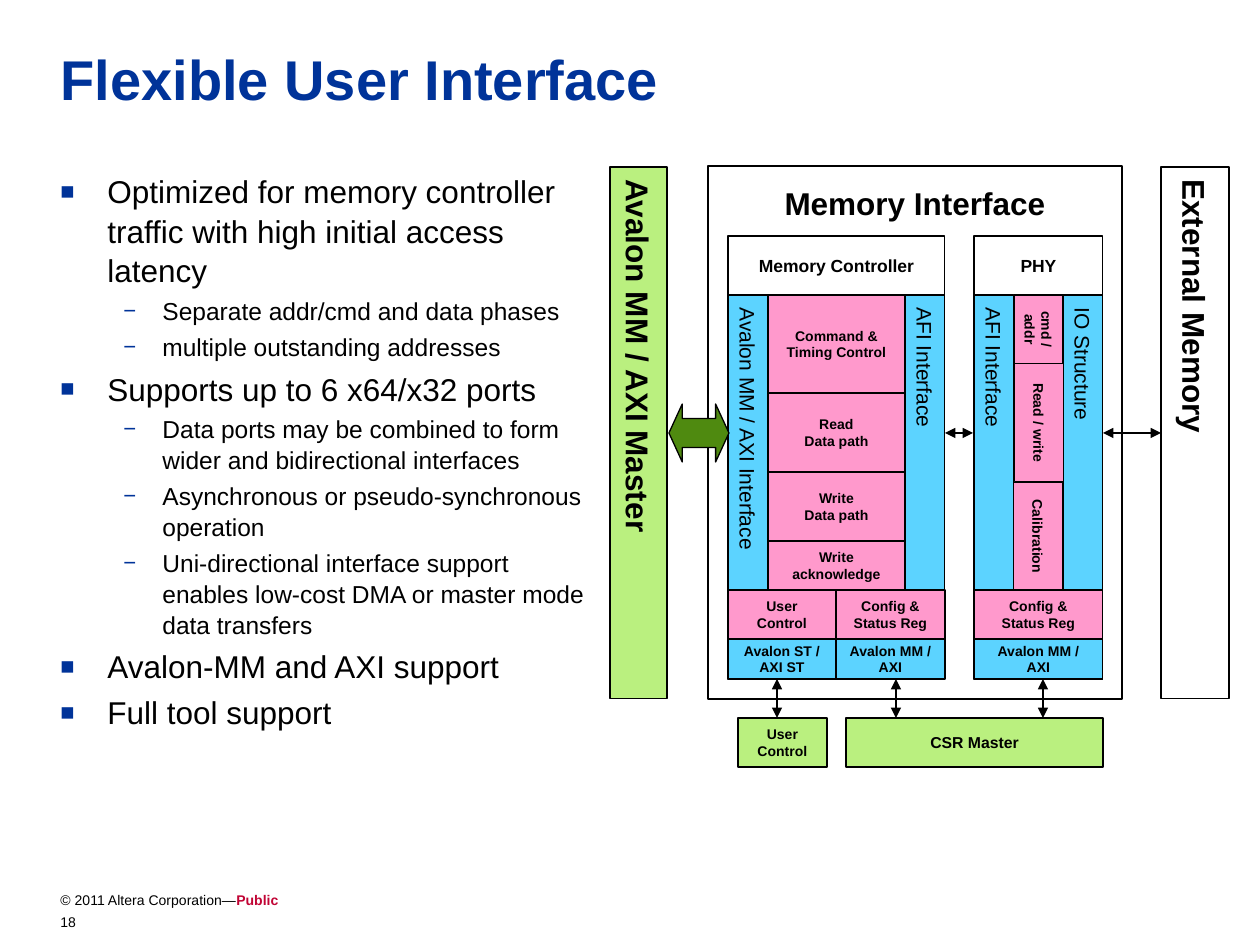
from lxml import etree
from pptx import Presentation, util as u
from pptx.dml.color import RGBColor
from pptx.enum import shapes, text
from pptx.oxml.ns import qn

PX = 914400 // 126
FONT = "Arial"
BLACK, WHITE, NAVY, RED = "000000", "FFFFFF", "003399", "C10435"
PINK, SKY, LIME, GREEN = "FF99CC", "5CD3FF", "BAF07F", "4F8A10"

TITLE = "Flexible User Interface"
BULLETS = [
    (0, "Optimized for memory controller traffic with high initial access latency"),
    (1, "Separate addr/cmd and data phases"),
    (1, "multiple outstanding addresses"),
    (0, "Supports up to 6 x64/x32 ports"),
    (1, "Data ports may be combined to form wider and bidirectional interfaces"),
    (1, "Asynchronous or pseudo-synchronous operation"),
    (1, "Uni-directional interface support enables low-cost DMA or master mode data transfers"),
    (0, "Avalon-MM and AXI support"),
    (0, "Full tool support"),
]
# per level: size pt, space before pt, margin px, hanging px, bullet, bullet size %
LEVELS = [(18, 3.6, 47, 47, "■", 75), (14, 3, 102, 39, "−", 90)]

# Shared edges of the block diagram
TOP, CORE, CONFIG, BUS, BOTTOM = 236, 295, 590, 639, 679
CONTROLLER = (728, 768, 905, 945)
CONTROLLER_MID = 836
PHY = (974, 1014, 1063, 1103)
FRAME = (708, 166, 414, 533)
EXTERNAL = (1161, 167, 68, 532)

PANELS = [("Memory Controller", CONTROLLER), ("PHY", PHY)]
SIDE_BARS = [  # left, right, text
    (*CONTROLLER[:2], "Avalon MM / AXI Interface"),
    (*CONTROLLER[2:], "AFI Interface"),
    (*PHY[:2], "AFI Interface"),
    (*PHY[2:], "IO Structure"),
]
STACKS = [  # columns, rotation, (bottom edge, text) from CORE down
    (CONTROLLER, 0, [(393, "Command &\nTiming Control"), (472, "Read\nData path"),
                     (541, "Write\nData path"), (CONFIG, "Write\nacknowledge")]),
    (PHY, 90, [(364, "cmd / addr"), (482, "Read / write"), (CONFIG, "Calibration")]),
]
PORTS = [  # left, right, register block, bus
    (CONTROLLER[0], CONTROLLER_MID, "User Control", "Avalon ST /\nAXI ST"),
    (CONTROLLER_MID, CONTROLLER[3], "Config & Status Reg", "Avalon MM /\nAXI"),
    (PHY[0], PHY[3], "Config & Status Reg", "Avalon MM /\nAXI"),
]
MASTERS = [(738, 827, "User Control", 8), (846, 1103, "CSR Master", 9)]
PORT_ARROWS_X = [777, 896, 1043]
LINK_Y = 433

prs = Presentation()
prs.slide_width, prs.slide_height = u.Inches(10), u.Inches(7.5)
slide = prs.slides.add_slide(prs.slide_layouts[5])


def rgb(color):
    return RGBColor.from_string(color)


def place(*lengths):
    return [u.Emu(n * PX) for n in lengths]


def style(font, size, color=BLACK, bold=False):
    font.name, font.size, font.bold = FONT, u.Pt(size), bold
    font.color.rgb = rgb(color)


def write(shape, words, size, bold=True, align=text.PP_ALIGN.CENTER,
          anchor=text.MSO_ANCHOR.MIDDLE, color=BLACK):
    frame = shape.text_frame
    frame.word_wrap, frame.vertical_anchor = True, anchor
    frame.text = words
    for paragraph in frame.paragraphs:
        paragraph.alignment = align
        for run in paragraph.runs:
            style(run.font, size, color, bold)


def label(box, words, size, **options):
    shape = slide.shapes.add_textbox(*place(*box))
    write(shape, words, size, **options)
    return shape


def block(box, fill, words="", size=8, bold=True, vertical=False, rotation=0,
          line=0.75, kind=shapes.MSO_SHAPE.RECTANGLE):
    x, y, w, h = box
    if rotation:  # the box is given as it appears after a quarter turn
        x, y, w, h = x + (w - h) / 2, y + (h - w) / 2, h, w
    shape = slide.shapes.add_shape(kind, *place(*map(round, (x, y, w, h))))
    shape.shadow.inherit = False
    shape.rotation = rotation
    if fill:
        shape.fill.solid()
        shape.fill.fore_color.rgb = rgb(fill)
    else:
        shape.fill.background()
    shape.line.color.rgb, shape.line.width = rgb(BLACK), u.Pt(line)
    if words:
        write(shape, words, size, bold)
    if vertical:
        shape.text_frame._txBody.bodyPr.set("vert", "eaVert")
    return shape


def double_arrow(x1, y1, x2, y2):
    arrow = slide.shapes.add_connector(shapes.MSO_CONNECTOR.STRAIGHT, *place(x1, y1, x2, y2))
    arrow.line.color.rgb, arrow.line.width = rgb(BLACK), u.Pt(1.5)
    line = arrow.line._get_or_add_ln()
    for end in ("a:headEnd", "a:tailEnd"):
        etree.SubElement(line, qn(end), type="triangle")
    etree.SubElement(arrow._element.spPr, qn("a:effectLst"))
    return arrow


def add_bullet(paragraph, margin, hanging, mark, percent):
    props = paragraph._p.get_or_add_pPr()
    props.set("marL", str(margin * PX))
    props.set("indent", str(-hanging * PX))
    color = etree.SubElement(props, qn("a:buClr"))
    etree.SubElement(color, qn("a:srgbClr"), val=NAVY)
    etree.SubElement(props, qn("a:buSzPct"), val=str(percent * 1000))
    etree.SubElement(props, qn("a:buFont"), typeface=FONT)
    etree.SubElement(props, qn("a:buChar"), char=mark)


left_top = dict(align=text.PP_ALIGN.LEFT, anchor=text.MSO_ANCHOR.TOP)

title = slide.shapes.title
title.left, title.top, title.width, title.height = place(48, 38, 1148, 126)
write(title, TITLE, 32, color=NAVY, **left_top)

body = label((48, 164, 563, 645), "\n".join(words for _, words in BULLETS), 18,
             bold=False, **left_top)
for i, (paragraph, (level, _)) in enumerate(zip(body.text_frame.paragraphs, BULLETS)):
    size, before, *bullet = LEVELS[level]
    paragraph.level = level
    paragraph.line_spacing = 1.05
    paragraph.space_before = u.Pt(before if i else 0)
    add_bullet(paragraph, *bullet)
    style(paragraph.runs[0].font, size)

footer = label((48, 885, 586, 53), "© 2011 Altera Corporation—", 8, bold=False, **left_top)
public = footer.text_frame.paragraphs[0].add_run()
public.text = "Public"
style(public.font, 8, RED, True)
label((48, 907, 96, 38), "18", 8, bold=False, **left_top)

block(FRAME, None, line=1.5)
label((708, 168, 414, 69), "Memory Interface", 18)
for name, (left, *_, right) in PANELS:
    block((left, TOP, right - left, BOTTOM - TOP), WHITE)
    label((left, TOP, right - left, CORE - TOP), name, 10)
for left, right, words in SIDE_BARS:
    block((left, CORE, right - left, CONFIG - CORE), SKY, words, 12, bold=False, vertical=True)
for (_, left, right, _), rotation, cells in STACKS:
    top = CORE
    for bottom, words in cells:
        block((left, top, right - left, bottom - top), PINK, words, rotation=rotation)
        top = bottom
for left, right, register, bus in PORTS:
    block((left, CONFIG, right - left, BUS - CONFIG), PINK, register)
    block((left, BUS, right - left, BOTTOM - BUS), SKY, bus)
for left, right, words, size in MASTERS:
    block((left, 718, right - left, 49), LIME, words, size)

block((610, 167, 57, 532), LIME, "Avalon MM / AXI Master", 18, vertical=True)
external = block(EXTERNAL, WHITE, "External Memory", 18, vertical=True)

host_arrow = block((669, 404, 60, 58), GREEN, kind=shapes.MSO_SHAPE.LEFT_RIGHT_ARROW)
host_arrow.adjustments[0], host_arrow.adjustments[1] = 0.5, 0.23
double_arrow(CONTROLLER[3], LINK_Y, 973, LINK_Y)
double_arrow(PHY[3], LINK_Y, EXTERNAL[0], LINK_Y).end_connect(external, 1)
for x in PORT_ARROWS_X:
    double_arrow(x, BOTTOM, x, 718)

prs.save("out.pptx")
